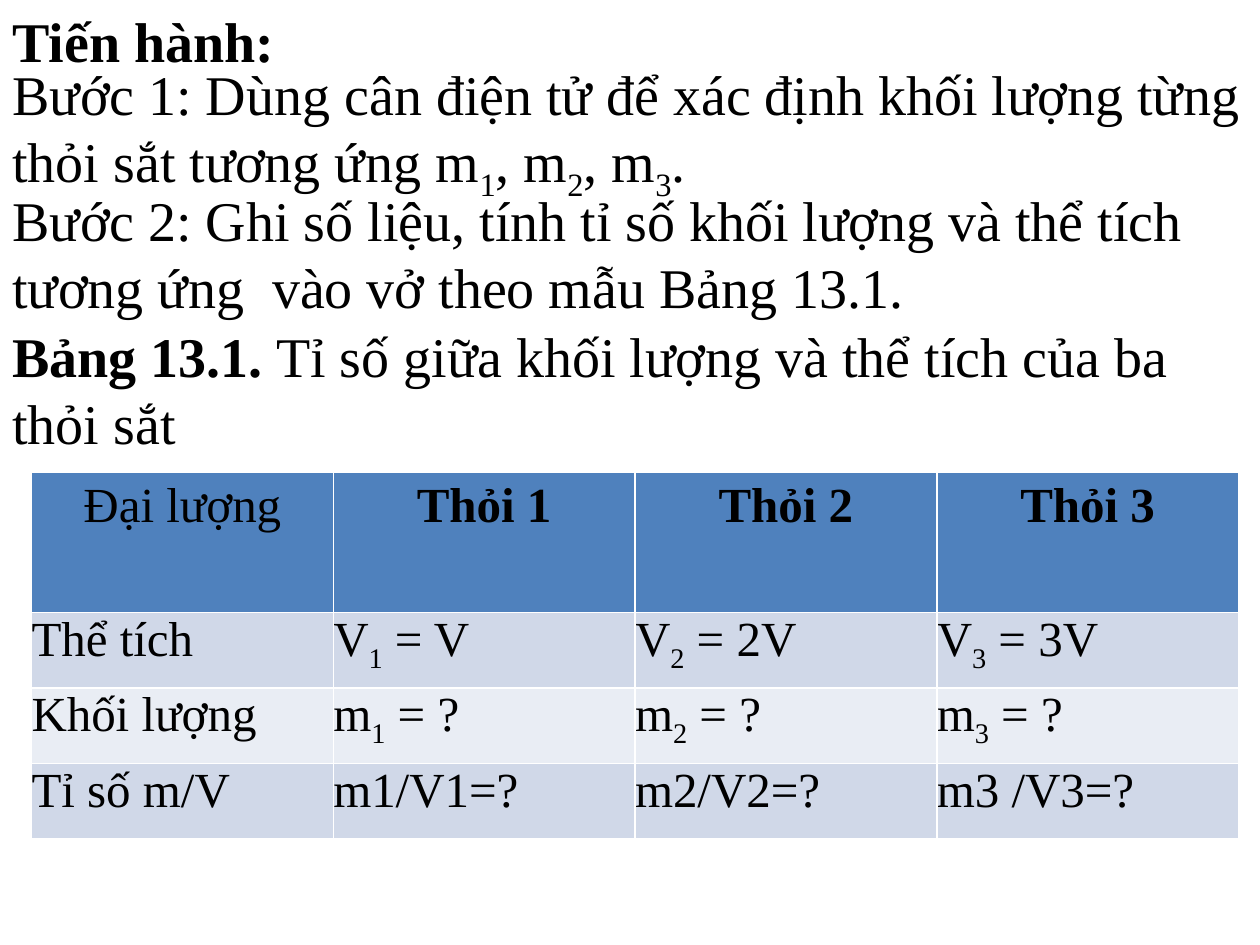
"""Build the slide on finding the mass to volume ratio of three iron bars."""
from pptx import Presentation
from pptx.dml.color import RGBColor
from pptx.enum.text import MSO_ANCHOR, MSO_AUTO_SIZE, PP_ALIGN
from pptx.util import Inches, Pt

HUES = {"ink": "000000", "head": "4F81BD", "odd": "D0D8E8", "even": "E9EDF4"}
FONT = "Times New Roman"


def write(para, text, size, bold=False):
    for i, part in enumerate(text.split("|")):
        run = para.add_run()
        run.text = part
        look = {"name": FONT, "size": Pt(size), "bold": bold}
        for key, value in look.items():
            setattr(run.font, key, value)
        run.font.color.rgb = RGBColor.from_string(HUES["ink"])
        if i % 2:
            run._r.get_or_add_rPr().set("baseline", "-25000")


def place(shape, top, width, height, wrap):
    spots = {"left": 0, "top": top, "width": width, "height": height}
    for key, value in spots.items():
        setattr(shape, key, Inches(value))
    frame = shape.text_frame
    look = {"word_wrap": wrap, "vertical_anchor": MSO_ANCHOR.TOP,
            "auto_size": MSO_AUTO_SIZE.SHAPE_TO_FIT_TEXT}
    for key, value in look.items():
        setattr(frame, key, value)
    para = frame.paragraphs[0]
    para.alignment = PP_ALIGN.LEFT
    return para


prs = Presentation()
prs.slide_width, prs.slide_height = Inches(10), Inches(7.5)
slide = prs.slides.add_slide(prs.slide_layouts[5])

write(place(slide.shapes.title, 0, 2.3, 0.64, False), "Tiến hành:", 32, True)

notes = [
    (0.42, "", "Bước 1: Dùng cân điện tử để xác định khối lượng từng "
     "thỏi sắt tương ứng m|1|, m|2|, m|3|."),
    (1.42, "", "Bước 2: Ghi số liệu, tính tỉ số khối lượng và thể tích "
     "tương ứng  vào vở theo mẫu Bảng 13.1."),
    (2.5, "Bảng 13.1.", " Tỉ số giữa khối lượng và thể tích của ba thỏi sắt"),
]
for top, lead, text in notes:
    box = slide.shapes.add_textbox(0, 0, 0, 0)
    para = place(box, top, 10, 1.18, True)
    if lead:
        write(para, lead, 32, True)
    write(para, text, 32)

rows = [
    ["Đại lượng", "Thỏi 1", "Thỏi 2", "Thỏi 3"],
    ["Thể tích", "V|1| = V", "V|2| = 2V", "V|3| = 3V"],
    ["Khối lượng", "m|1| = ?", "m|2| = ?", "m|3| = ?"],
    ["Tỉ số m/V", "m1/V1=?", "m2/V2=?", "m3 /V3=?"],
]
grid = slide.shapes.add_table(
    4, 4, Inches(0.25), Inches(3.75), Inches(9.58), Inches(2.91)).table
for r, row in enumerate(rows):
    grid.rows[r].height = Inches(0.6 if r else 1.11)
    hue = ("even" if r % 2 == 0 else "odd") if r else "head"
    for c, text in enumerate(row):
        cell = grid.cell(r, c)
        cell.fill.solid()
        cell.fill.fore_color.rgb = RGBColor.from_string(HUES[hue])
        para = cell.text_frame.paragraphs[0]
        para.alignment = PP_ALIGN.JUSTIFY if r else PP_ALIGN.CENTER
        write(para, text, 28, r == 0 and c > 0)
        if r:
            for side in ("left", "top", "right", "bottom"):
                setattr(cell, f"margin_{side}", 0)

prs.save("out.pptx")
